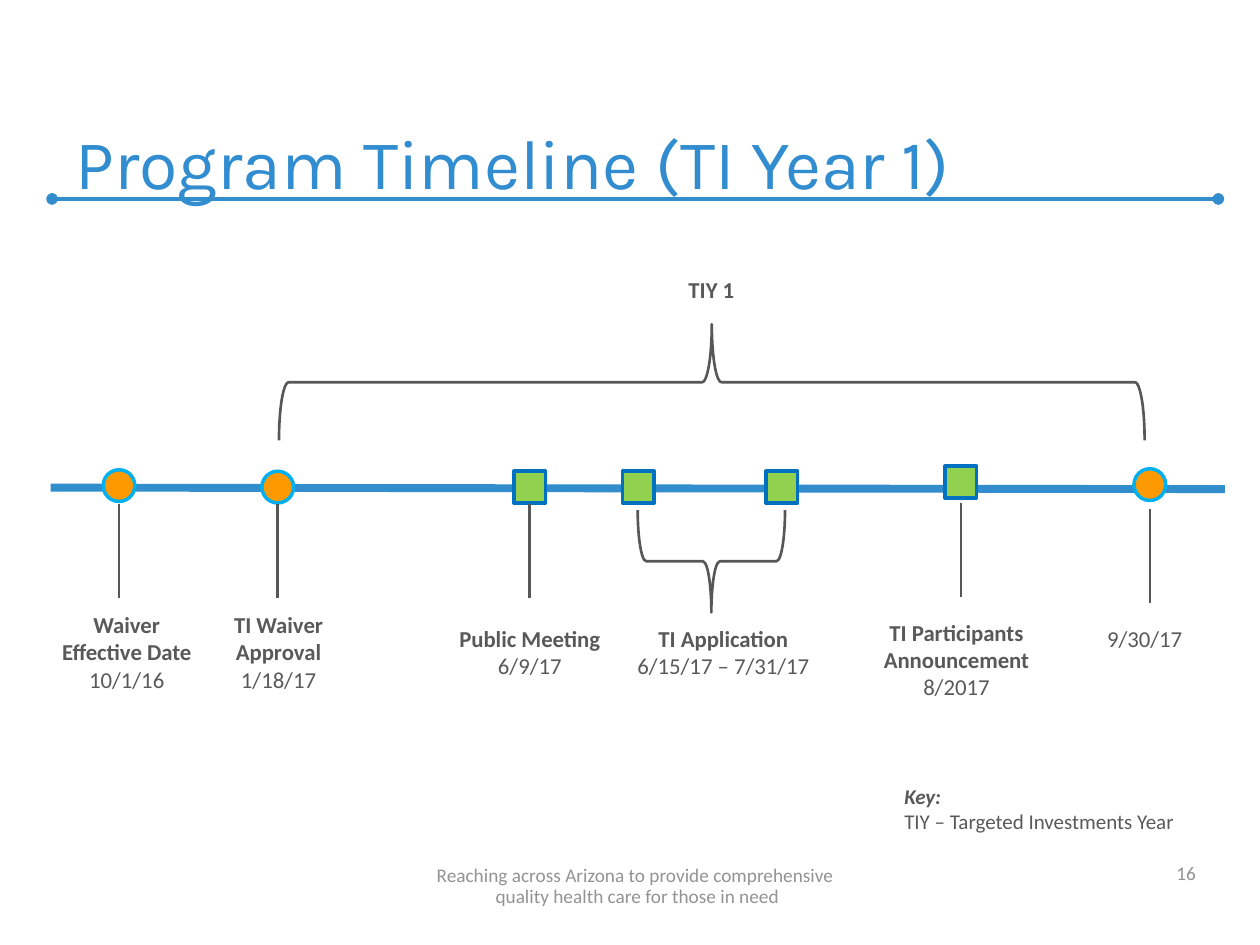
"""Build the Program Timeline slide for TI Year 1."""
from pptx import Presentation
from pptx.dml.color import RGBColor
from pptx.enum.shapes import MSO_CONNECTOR, MSO_SHAPE
from pptx.enum.text import MSO_ANCHOR, PP_ALIGN
from pptx.oxml.ns import qn
from pptx.util import Cm, Pt
from lxml.etree import SubElement

BLUE = RGBColor(0x31, 0x8D, 0xCC)
TITLE = RGBColor(0x31, 0x8D, 0xCF)
DARK = RGBColor(0x57, 0x57, 0x57)
TEXT = RGBColor(0x59, 0x59, 0x59)
GRAY = RGBColor(0x93, 0x93, 0x93)
ORANGE = RGBColor(0xFF, 0x99, 0x00)
CYAN = RGBColor(0x00, 0xB0, 0xF0)
GREEN = RGBColor(0x92, 0xD0, 0x50)
NAVY = RGBColor(0x00, 0x70, 0xC0)

BODY = {"name": "Calibri", "size": Pt(13)}
BOLD = {**BODY, "bold": True}
KEY = {"name": "Calibri", "size": Pt(12)}
HEAD = {**KEY, "bold": True, "italic": True}
FOOT = {"name": "Calibri", "size": Pt(11)}

deck = Presentation()
deck.slide_width, deck.slide_height = Cm(25.4), Cm(19.05)
slide = deck.slides.add_slide(deck.slide_layouts[5])
shapes = slide.shapes


def write(place, rows, color=TEXT, align=PP_ALIGN.CENTER, anchor=MSO_ANCHOR.TOP):
    frame = shapes.add_textbox(*map(Cm, place)).text_frame
    frame.word_wrap = True
    frame.vertical_anchor = anchor
    for i, (words, style) in enumerate(rows):
        para = frame.add_paragraph() if i else frame.paragraphs[0]
        para.text = words
        para.alignment = align
        para.font.color.rgb = color
        for run in para.runs:
            run.font.color.rgb = color
            for name, value in style.items():
                setattr(run.font, name, value)
    return frame


def draw(ends, color, width):
    line = shapes.add_connector(MSO_CONNECTOR.STRAIGHT, *map(Cm, ends))
    line.line.color.rgb = color
    line.line.width = Pt(width)
    SubElement(line._element.spPr, qn("a:effectLst"))
    return line


rule = draw((1.05, 4.01, 24.56, 4.01), BLUE, 2.25)
for end in ("a:headEnd", "a:tailEnd"):
    SubElement(rule.line._get_or_add_ln(), qn(end), type="oval")

title = shapes.title
title.left, title.top, title.width, title.height = map(Cm, (1.27, 0.84, 23.06, 3.38))
title.text = "Program Timeline (TI Year 1)"
title.text_frame.vertical_anchor = MSO_ANCHOR.BOTTOM
head = title.text_frame.paragraphs[0]
head.alignment = PP_ALIGN.LEFT
head.runs[0].font.color.rgb = TITLE
for name, value in {"name": "Karla", "size": Pt(40)}.items():
    setattr(head.runs[0].font, name, value)

draw((1.02, 9.83, 24.69, 9.86), BLUE, 4.5)

DOT = (MSO_SHAPE.OVAL, ORANGE, CYAN)
BOX = (MSO_SHAPE.RECTANGLE, GREEN, NAVY)
SIDE, STEM = 0.64, 1.9
marks = [
    (DOT, 2.08, 9.47, 10.16),
    (DOT, 5.28, 9.5, 10.16),
    (BOX, 10.36, 9.5, 10.16),
    (BOX, 12.55, 9.5, None),
    (BOX, 15.44, 9.5, None),
    (BOX, 19.05, 9.4, 10.13),
    (DOT, 22.86, 9.45, 10.26),
]
for (kind, fill, edge), left, top, start in marks:
    mark = shapes.add_shape(kind, Cm(left), Cm(top), Cm(SIDE), Cm(SIDE))
    mark.shadow.inherit = False
    mark.fill.solid()
    mark.fill.fore_color.rgb = fill
    mark.line.color.rgb = edge
    mark.line.width = Pt(2)
    if start:
        mid = left + SIDE / 2
        draw((mid, start, mid, start + STEM), DARK, 1.5)

for place, turn in [((13.31, 9.83, 2.06, 2.97), 90), ((13.18, -1.02, 2.34, 17.45), 270)]:
    brace = shapes.add_shape(MSO_SHAPE.RIGHT_BRACE, *map(Cm, place))
    brace.rotation = turn
    brace.shadow.inherit = False
    brace.fill.background()
    brace.line.color.rgb = DARK
    brace.line.width = Pt(1.5)

labels = [
    ((0.94, 12.19, 3.23, 1.93), "Waiver Effective Date", "10/1/16"),
    ((3.86, 12.19, 3.51, 1.93), "TI Waiver Approval", "1/18/17"),
    ((8.99, 12.47, 3.38, 1.37), "Public Meeting", "6/9/17"),
    ((12.55, 12.47, 4.06, 1.37), "TI Application", "6/15/17 – 7/31/17"),
    ((17.25, 12.34, 4.06, 1.93), "TI Participants Announcement", "8/2017"),
]
for place, event, date in labels:
    write(place, [(event, BOLD), (date, BODY)])
write((21.46, 12.47, 3.23, 0.81), [("9/30/17", BODY)])
write((12.65, 5.44, 3.38, 0.81), [("TIY 1", BOLD)])
write((17.98, 15.67, 6.2, 1.27),
      [("Key:", HEAD), ("TIY – Targeted Investments Year", KEY)], align=PP_ALIGN.LEFT)

write((18.44, 17.15, 5.92, 0.81), [("16", FOOT)], GRAY, PP_ALIGN.RIGHT, MSO_ANCHOR.BOTTOM)
motto = "Reaching across Arizona to provide comprehensive \vquality health care for those in need"
foot = write((0.15, 17.35, 25.4, 1.07), [(motto, FOOT)], GRAY, anchor=MSO_ANCHOR.BOTTOM)
foot.paragraphs[0].line_spacing = Pt(12)

deck.save("out.pptx")
